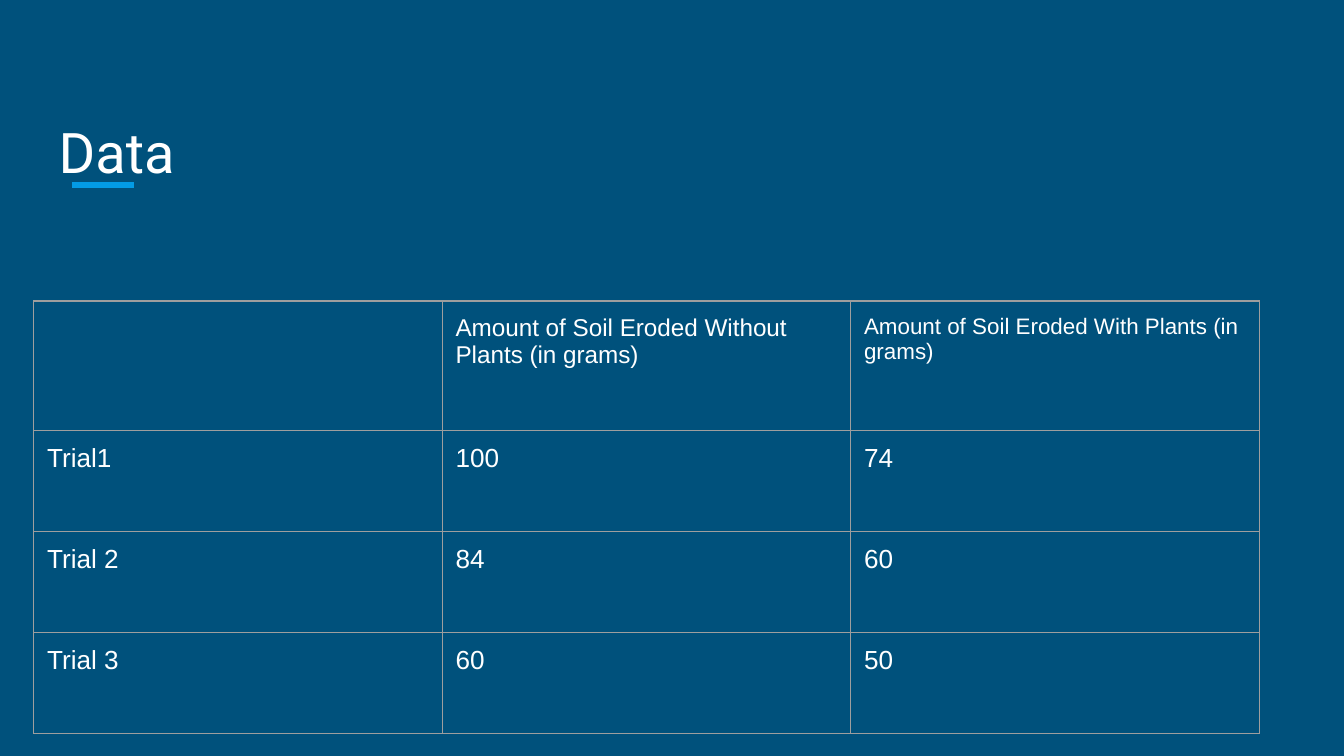
from dataclasses import dataclass

from lxml import etree
from pptx import Presentation
from pptx.dml.color import RGBColor
from pptx.enum.shapes import MSO_CONNECTOR
from pptx.enum.text import MSO_ANCHOR
from pptx.oxml.ns import qn
from pptx.util import Cm, Pt

STRAIGHT = MSO_CONNECTOR.STRAIGHT
TOP = MSO_ANCHOR.TOP

HEADING = "Data"
TRIALS = [
    ("", "Amount of Soil Eroded Without Plants (in grams)",
     "Amount of Soil Eroded With Plants (in grams)"),
    ("Trial1", "100", "74"),
    ("Trial 2", "84", "60"),
    ("Trial 3", "60", "50"),
]


@dataclass(frozen=True)
class Theme:
    background: str = "00517C"
    accent: str = "039BE5"
    text: str = "FFFFFF"
    border: str = "9E9E9E"
    heading_font: str = "Roboto"
    body_font: str = "Arial"
    heading_size: int = 30
    body_size: int = 14
    header_sizes: tuple = (14, 13, 12)
    border_width: float = 0.75
    accent_width: int = 3


THEME = Theme()
INSET = Cm(0.25)
COLUMN_WIDTH = Cm(7.72)
HEADER_HEIGHT = Cm(2.44)
TRIAL_HEIGHT = Cm(1.91)


def style_paragraph(paragraph, font_name, size):
    paragraph.font.name = font_name
    paragraph.font.size = Pt(size)
    paragraph.font.bold = False
    paragraph.font.color.rgb = RGBColor.from_string(THEME.text)


def set_insets(frame):
    frame.margin_left = frame.margin_right = INSET
    frame.margin_top = frame.margin_bottom = INSET


def add_borders(cell):
    properties = cell._tc.get_or_add_tcPr()
    for side in ("a:lnL", "a:lnR", "a:lnT", "a:lnB"):
        edge = etree.SubElement(properties, qn(side), w=str(Pt(THEME.border_width)))
        fill = etree.SubElement(edge, qn("a:solidFill"))
        etree.SubElement(fill, qn("a:srgbClr"), val=THEME.border)


def add_accent(slide):
    accent = slide.shapes.add_connector(STRAIGHT, Cm(1.37), Cm(3.5), Cm(2.54), Cm(3.5))
    accent.line.color.rgb = RGBColor.from_string(THEME.accent)
    accent.line.width = Pt(THEME.accent_width)
    etree.SubElement(accent._element.spPr, qn("a:effectLst"))


def add_trials(slide):
    height = HEADER_HEIGHT + TRIAL_HEIGHT * (len(TRIALS) - 1)
    table = slide.shapes.add_table(
        len(TRIALS), len(TRIALS[0]), Cm(0.64), Cm(5.69),
        COLUMN_WIDTH * len(TRIALS[0]), height).table
    table.first_row = False
    table.horz_banding = False
    for column in table.columns:
        column.width = COLUMN_WIDTH
    for r, trial in enumerate(TRIALS):
        table.rows[r].height = TRIAL_HEIGHT if r else HEADER_HEIGHT
        for c, value in enumerate(trial):
            cell = table.cell(r, c)
            cell.text = value
            cell.vertical_anchor = TOP
            set_insets(cell)
            add_borders(cell)
            cell.fill.background()
            size = THEME.body_size if r else THEME.header_sizes[c]
            style_paragraph(cell.text_frame.paragraphs[0], THEME.body_font, size)


def add_heading(slide):
    frame = slide.shapes.add_textbox(Cm(0.86), Cm(1.98), Cm(5), Cm(1.47)).text_frame
    frame.word_wrap = True
    frame.vertical_anchor = TOP
    set_insets(frame)
    frame.text = HEADING
    style_paragraph(frame.paragraphs[0], THEME.heading_font, THEME.heading_size)


def main():
    deck = Presentation()
    deck.slide_width = Cm(25.4)
    deck.slide_height = Cm(14.29)
    slide = deck.slides.add_slide(deck.slide_layouts[6])
    slide.background.fill.solid()
    slide.background.fill.fore_color.rgb = RGBColor.from_string(THEME.background)
    add_accent(slide)
    add_trials(slide)
    add_heading(slide)
    deck.save("out.pptx")


if __name__ == "__main__":
    main()
